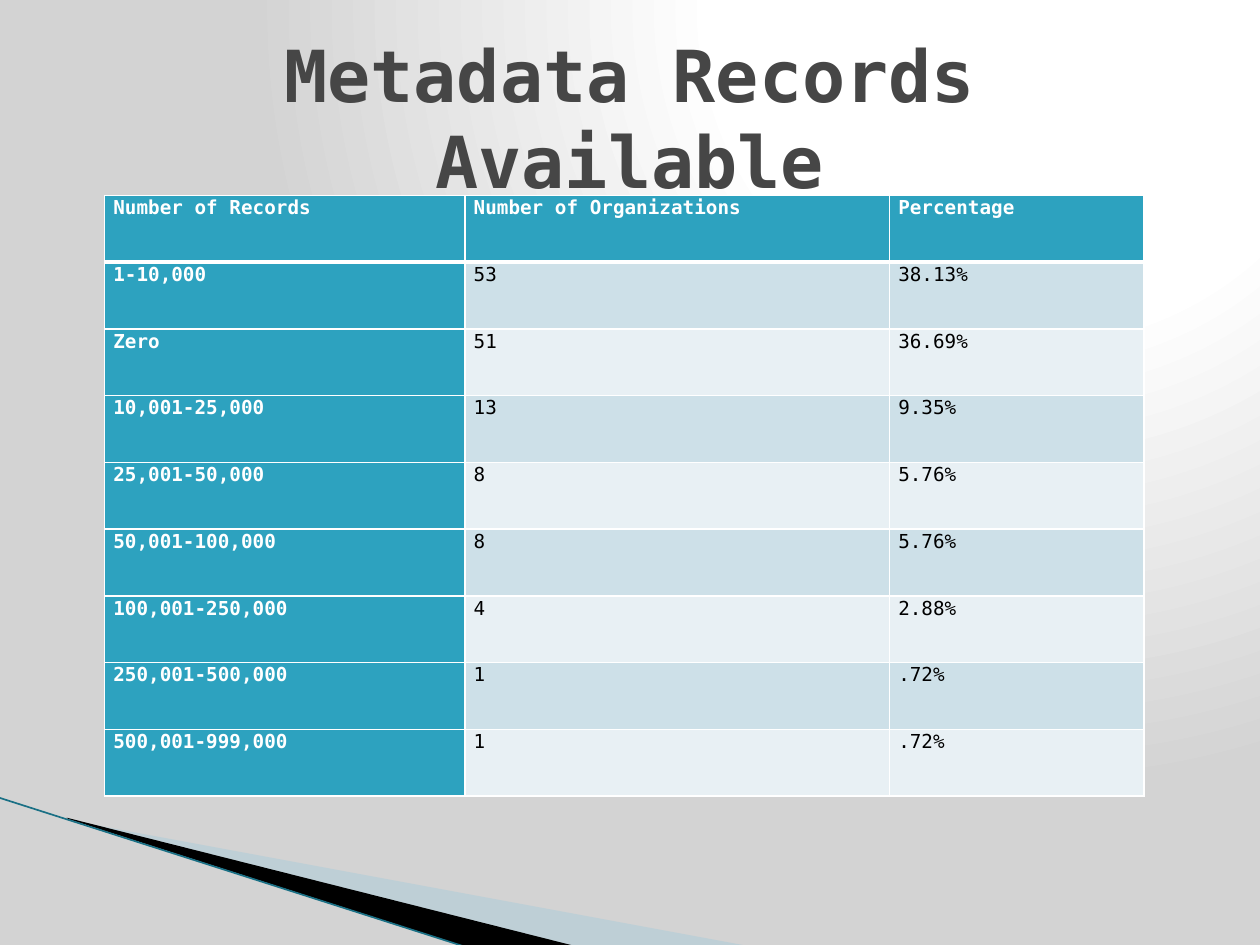
from lxml.etree import SubElement
from pptx import Presentation
from pptx.dml.color import RGBColor
from pptx.enum.shapes import MSO_CONNECTOR
from pptx.enum.text import MSO_ANCHOR, PP_ALIGN
from pptx.oxml import parse_xml
from pptx.oxml.ns import nsdecls, qn
from pptx.util import Inches, Pt

TITLE = "Metadata Records Available"
HEADER = ("Number of Records", "Number of Organizations", "Percentage")
RECORDS = [
    ("1-10,000", "53", "38.13%"),
    ("Zero", "51", "36.69%"),
    ("10,001-25,000", "13", "9.35%"),
    ("25,001-50,000", "8", "5.76%"),
    ("50,001-100,000", "8", "5.76%"),
    ("100,001-250,000", "4", "2.88%"),
    ("250,001-500,000", "1", ".72%"),
    ("500,001-999,000", "1", ".72%"),
]
COLUMN_WIDTHS = (2.86, 3.37, 2.02)
ROW_HEIGHT = 0.53
FONT = "DejaVu Sans Mono"
COLORS = {
    "white": "FFFFFF", "grey": "D3D3D3", "black": "000000", "title": "464646",
    "accent": "2DA2BF", "odd": "CDE0E8", "even": "E8F0F4",
    "wedge": "A0CBDC", "edge": "1A7085",
}
WEDGES = [
    ("wedge", 40, [(0.55, 6.51), (5.95, 7.51), (4.56, 7.51), (0.55, 6.5)]),
    ("black", 100, [(0.53, 6.49), (4.57, 7.51), (3.72, 7.52), (0.54, 6.5)]),
]
EDGE = (-0.01, 6.33, 3.71, 7.52)
BACKGROUND_STOPS = ((0, "white"), (40, "white"), (100, "grey"))


def color(name):
    return RGBColor.from_string(COLORS[name])


def write(frame, text, size, ink, bold=False, align=PP_ALIGN.LEFT, spacing=None):
    para = frame.paragraphs[0]
    para.alignment = align
    para.line_spacing = spacing
    span = para.add_run()
    span.text = text
    span.font.name = FONT
    span.font.size = Pt(size)
    span.font.bold = bold
    span.font.color.rgb = color(ink)


def paint_background(slide):
    stops = "".join(
        f'<a:gs pos="{position * 1000}"><a:srgbClr val="{COLORS[name]}"/></a:gs>'
        for position, name in BACKGROUND_STOPS
    )
    background = parse_xml(
        f'<p:bg {nsdecls("p", "a")}><p:bgPr><a:gradFill rotWithShape="1">'
        f'<a:gsLst>{stops}</a:gsLst><a:path path="circle">'
        '<a:fillToRect l="65000" b="98000"/></a:path></a:gradFill>'
        '<a:effectLst/></p:bgPr></p:bg>'
    )
    slide.element.cSld.insert(0, background)


def add_wedge(slide, name, opacity, points):
    corners = [(Inches(x), Inches(y)) for x, y in points]
    builder = slide.shapes.build_freeform(*corners[0])
    builder.add_line_segments(corners[1:], close=True)
    wedge = builder.convert_to_shape()
    wedge.shadow.inherit = False
    wedge.line.fill.background()
    wedge.fill.solid()
    wedge.fill.fore_color.rgb = color(name)
    if opacity < 100:
        tint = wedge.element.spPr.find(f"{qn('a:solidFill')}/{qn('a:srgbClr')}")
        SubElement(tint, qn("a:alpha"), val=str(opacity * 1000))


def add_edge(slide):
    edge = slide.shapes.add_connector(MSO_CONNECTOR.STRAIGHT, *map(Inches, EDGE))
    edge.line.color.rgb = color("edge")
    edge.line.width = Pt(0.95)
    SubElement(edge.element.spPr, qn("a:effectLst"))


def add_borders(cell, is_header, below_header):
    widths = {"L": 1, "R": 1, "T": 3 if below_header else 1, "B": 3 if is_header else 1}
    properties = cell._tc.get_or_add_tcPr()
    for index, (side, width) in enumerate(widths.items()):
        properties.insert(index, parse_xml(
            f'<a:ln{side} {nsdecls("a")} w="{Pt(width)}"><a:solidFill>'
            f'<a:srgbClr val="{COLORS["white"]}"/></a:solidFill></a:ln{side}>'
        ))


def add_records_table(slide):
    rows = [HEADER, *RECORDS]
    table = slide.shapes.add_table(
        len(rows), len(HEADER), Inches(0.83), Inches(1.55),
        Inches(sum(COLUMN_WIDTHS)), Inches(ROW_HEIGHT * len(rows)),
    ).table
    for column, width in zip(table.columns, COLUMN_WIDTHS):
        column.width = Inches(width)
    for row_index, row in enumerate(rows):
        table.rows[row_index].height = Inches(ROW_HEIGHT)
        for column_index, text in enumerate(row):
            cell = table.cell(row_index, column_index)
            is_label = row_index == 0 or column_index == 0
            cell.margin_left = cell.margin_right = Inches(0.07)
            cell.margin_top = cell.margin_bottom = 0
            cell.fill.solid()
            band = "odd" if row_index % 2 else "even"
            cell.fill.fore_color.rgb = color("accent" if is_label else band)
            add_borders(cell, row_index == 0, row_index == 1)
            write(cell.text_frame, text, size=11, bold=is_label, spacing=1.06,
                  ink="white" if is_label else "black")


def add_title(slide):
    title = slide.shapes.title
    title.left, title.top = Inches(0.5), Inches(0.3)
    title.width, title.height = Inches(9), Inches(1.25)
    title.text_frame.word_wrap = True
    title.text_frame.vertical_anchor = MSO_ANCHOR.MIDDLE
    write(title.text_frame, TITLE, size=41, ink="title", bold=True, align=PP_ALIGN.CENTER)


def main():
    """Build the slide of metadata record counts by organization."""
    deck = Presentation()
    deck.slide_width, deck.slide_height = Inches(10), Inches(7.5)
    page = deck.slides.add_slide(deck.slide_layouts[5])
    paint_background(page)
    for wedge in WEDGES:
        add_wedge(page, *wedge)
    add_edge(page)
    add_records_table(page)
    add_title(page)
    deck.save("out.pptx")


if __name__ == "__main__":
    main()
